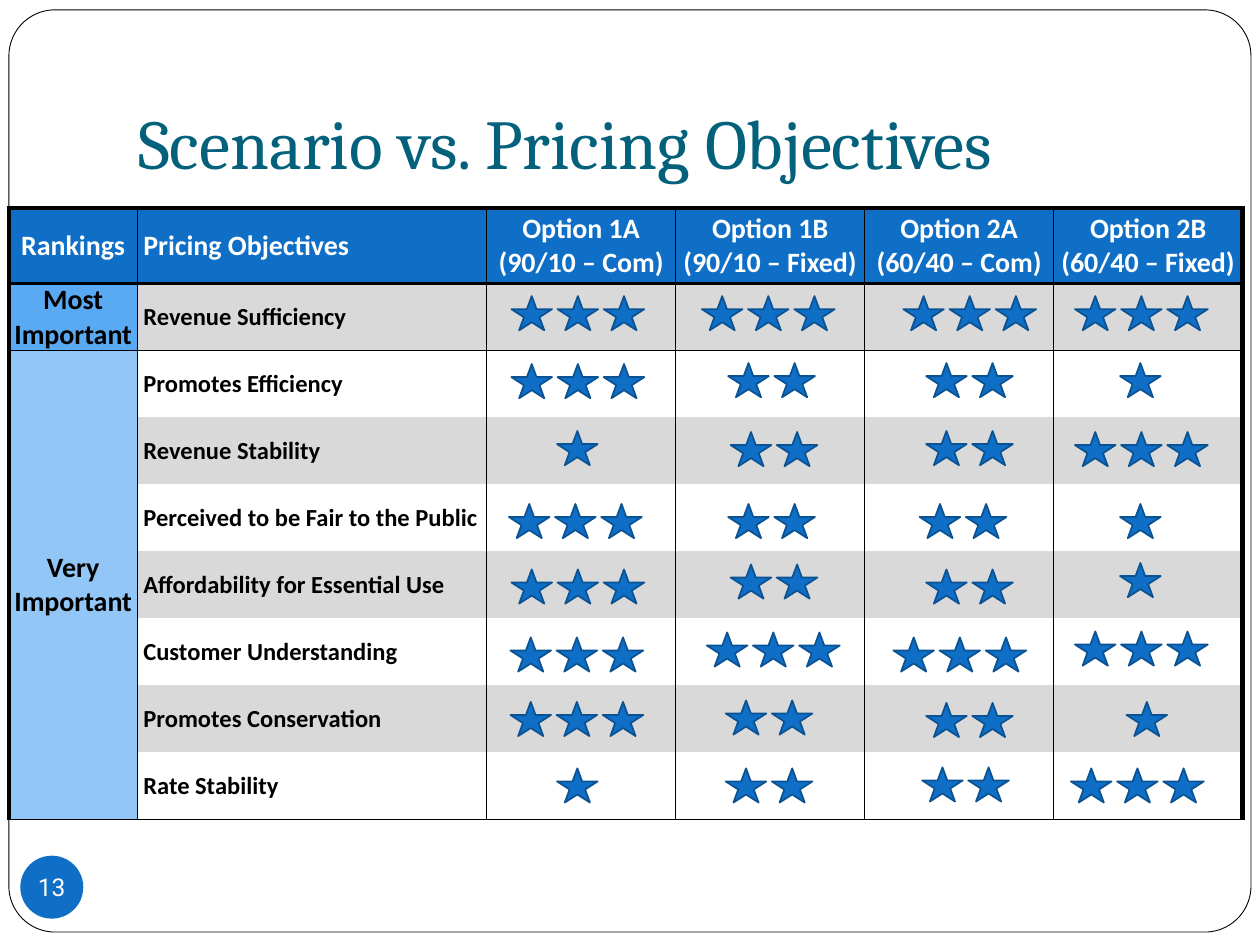
from lxml.etree import SubElement
from pptx import Presentation
from pptx.dml.color import RGBColor
from pptx.enum.shapes import MSO_SHAPE as Preset
from pptx.enum.text import MSO_ANCHOR as Anchor, PP_ALIGN as Align
from pptx.oxml.ns import qn
from pptx.util import Cm, Pt

BLACK = RGBColor(0x00, 0x00, 0x00)
WHITE = RGBColor(0xFF, 0xFF, 0xFF)
TEAL = RGBColor(0x04, 0x61, 0x7B)
BLUE = RGBColor(0x0F, 0x6F, 0xC6)
STAR_EDGE = RGBColor(0x0B, 0x52, 0x92)
MOST_BLUE = RGBColor(0x59, 0xAA, 0xF2)
VERY_BLUE = RGBColor(0x91, 0xC6, 0xF7)
GREY = RGBColor(0xD9, 0xD9, 0xD9)
NO_TABLE_STYLE = "{2D5ABB26-0587-4C30-8999-92F81FD0307C}"

TITLE = "Scenario vs. Pricing Objectives"
PAGE_NUMBER = "13"
HEADINGS = [
    "Rankings", "Pricing Objectives",
    "Option 1A\n(90/10 – Com)", "Option 1B\n(90/10 – Fixed)",
    "Option 2A\n(60/40 – Com)", "Option 2B\n(60/40 – Fixed)",
]
# First row, text and fill of each ranking
RANKINGS = [(1, "Most Important", MOST_BLUE), (2, "Very\nImportant", VERY_BLUE)]
# Objective, then for each option: number of stars, left and top of the first (cm)
OBJECTIVES = [
    ("Revenue Sufficiency",
     [(3, 10.31, 5.97), (3, 14.15, 5.97), (3, 18.21, 5.97), (3, 21.67, 5.97)]),
    ("Promotes Efficiency",
     [(3, 10.31, 7.34), (2, 14.68, 7.32), (2, 18.67, 7.32), (1, 22.58, 7.32)]),
    ("Revenue Stability",
     [(1, 11.23, 8.69), (2, 14.73, 8.71), (2, 18.67, 8.69), (3, 21.67, 8.71)]),
    ("Perceived to be Fair to the Public",
     [(3, 10.26, 10.16), (2, 14.68, 10.16), (2, 18.54, 10.16), (1, 22.58, 10.16)]),
    ("Affordability for Essential Use",
     [(3, 10.31, 11.48), (2, 14.73, 11.38), (2, 18.67, 11.48), (1, 22.58, 11.35)]),
    ("Customer Understanding",
     [(3, 10.29, 12.85), (3, 14.25, 12.75), (3, 18.01, 12.85), (3, 21.67, 12.73)]),
    ("Promotes Conservation",
     [(3, 10.29, 14.15), (2, 14.63, 14.12), (2, 18.67, 14.17), (1, 22.71, 14.15)]),
    ("Rate Stability",
     [(1, 11.23, 15.49), (2, 14.63, 15.49), (2, 18.59, 15.47), (3, 21.59, 15.49)]),
]

COLUMN_WIDTHS = [2.59, 7.04, 3.81, 3.81, 3.81, 3.81]
HEADER_HEIGHT, ROW_HEIGHT = 1.52, 1.35
STAR_WIDTH, STAR_HEIGHT, STAR_STEP = 0.82, 0.69, 0.93
LAST_ROW, LAST_COLUMN = len(OBJECTIVES), len(HEADINGS) - 1


def add_preset(slide, preset, left, top, width, height, fill, edge=None, edge_width=1):
    shape = slide.shapes.add_shape(preset, Cm(left), Cm(top), Cm(width), Cm(height))
    shape.shadow.inherit = False
    shape.fill.solid()
    shape.fill.fore_color.rgb = fill
    if edge is None:
        shape.line.fill.background()
    else:
        shape.line.color.rgb = edge
        shape.line.width = Pt(edge_width)
    return shape


def write(frame, text, font, size, color, bold=False, align=Align.LEFT):
    frame.text = text
    for paragraph in frame.paragraphs:
        paragraph.alignment = align
        for run in paragraph.runs:
            run.font.name = font
            run.font.size = Pt(size)
            run.font.bold = bold
            run.font.color.rgb = color


def set_margins(box, left=0, top=0, right=0, bottom=0):
    box.margin_left, box.margin_top = Cm(left), Cm(top)
    box.margin_right, box.margin_bottom = Cm(right), Cm(bottom)


def border_widths(row, column):
    """Widths in points by side; 0 leaves the side open."""
    top = {0: 3, 1: 2.25, 2: 1}.get(row, 0)
    bottom = {0: 2.25, 1: 1, LAST_ROW: 1}.get(row, 0)
    if column == 0 and row == 2:
        bottom = 1
    return {"L": 3 if column == 0 else 1, "R": 3 if column == LAST_COLUMN else 1,
            "T": top, "B": bottom}


def set_borders(cell, widths):
    properties = cell._tc.get_or_add_tcPr()
    for side, width in widths.items():
        line = SubElement(properties, qn(f"a:ln{side}"), w=str(Pt(width)))
        if width:
            paint = SubElement(line, qn("a:solidFill"))
            SubElement(paint, qn("a:srgbClr"), val=str(BLACK))
        else:
            SubElement(line, qn("a:noFill"))


def fill_cell(cell, color):
    cell.fill.solid()
    cell.fill.fore_color.rgb = color


def add_objectives_table(slide):
    table = slide.shapes.add_table(
        LAST_ROW + 1, LAST_COLUMN + 1, Cm(0.18), Cm(4.19), Cm(sum(COLUMN_WIDTHS)),
        Cm(HEADER_HEIGHT + LAST_ROW * ROW_HEIGHT)).table
    table._tbl.tblPr.find(qn("a:tableStyleId")).text = NO_TABLE_STYLE
    for column, width in zip(table.columns, COLUMN_WIDTHS):
        column.width = Cm(width)
    for row_index, row in enumerate(table.rows):
        row.height = Cm(ROW_HEIGHT if row_index else HEADER_HEIGHT)
        for column_index, cell in enumerate(row.cells):
            set_borders(cell, border_widths(row_index, column_index))
            set_margins(cell, left=0.12 if column_index == 1 else 0)
            cell.vertical_anchor = Anchor.MIDDLE
            banded = GREY if row_index % 2 else WHITE
            fill_cell(cell, banded if row_index else BLUE)

    for column_index, heading in enumerate(HEADINGS):
        write(table.cell(0, column_index).text_frame, heading, "Calibri", 16, WHITE,
              True, Align.LEFT if column_index == 1 else Align.CENTER)
    for row_index, (objective, _) in enumerate(OBJECTIVES, start=1):
        write(table.cell(row_index, 1).text_frame, objective, "Calibri", 14, BLACK, True)
    table.cell(2, 0).merge(table.cell(LAST_ROW, 0))
    for row_index, ranking, color in RANKINGS:
        cell = table.cell(row_index, 0)
        fill_cell(cell, color)
        write(cell.text_frame, ranking, "Calibri", 16, BLACK, True, Align.CENTER)


def add_stars(slide):
    for _, ratings in OBJECTIVES:
        for count, left, top in ratings:
            for position in range(count):
                add_preset(slide, Preset.STAR_5_POINT, left + position * STAR_STEP, top,
                           STAR_WIDTH, STAR_HEIGHT, BLUE, STAR_EDGE)


def main():
    deck = Presentation()
    deck.slide_width, deck.slide_height = Cm(25.4), Cm(19.05)
    slide = deck.slides.add_slide(deck.slide_layouts[6])

    frame = add_preset(slide, Preset.ROUNDED_RECTANGLE, 0.18, 0.2, 25.04, 18.59,
                       WHITE, BLACK, 0.5)
    frame.adjustments[0] = 0.05

    title = slide.shapes.add_textbox(Cm(2.54), Cm(0.76), Cm(21.59), Cm(3.18)).text_frame
    title.word_wrap = True
    title.vertical_anchor = Anchor.BOTTOM
    set_margins(title, 0.25, 0.13, 0.25, 0.25)
    write(title, TITLE, "Cambria", 40, TEAL)

    add_objectives_table(slide)
    add_stars(slide)

    badge = add_preset(slide, Preset.OVAL, 0.41, 17.25, 1.27, 1.27, BLUE).text_frame
    badge.word_wrap = False
    badge.vertical_anchor = Anchor.MIDDLE
    set_margins(badge)
    write(badge, PAGE_NUMBER, "Roboto", 14, WHITE, align=Align.CENTER)

    deck.save("out.pptx")


if __name__ == "__main__":
    main()
